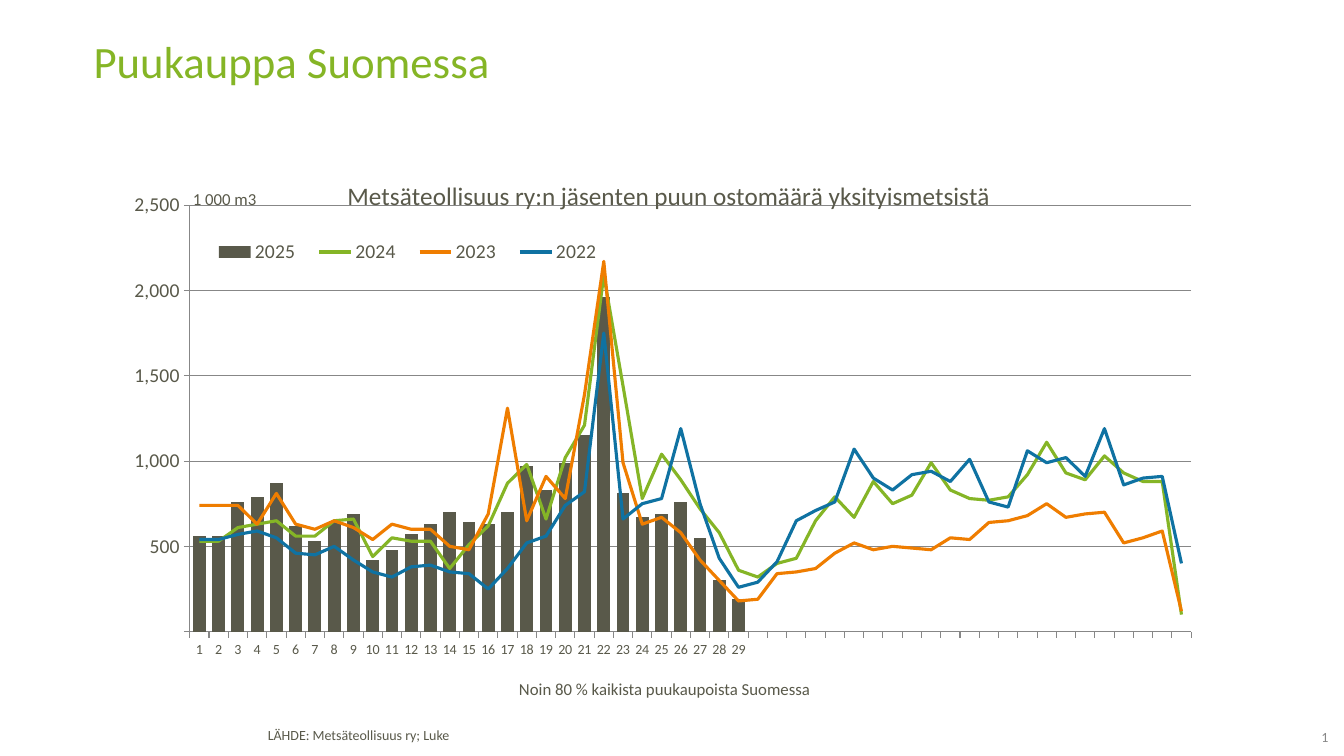
import lxml.etree
import pptx
import pptx.chart.data
import pptx.dml.color
import pptx.enum.chart
import pptx.enum.text
import pptx.oxml
import pptx.oxml.ns
import pptx.util
from pptx.util import Cm

RGBColor = pptx.dml.color.RGBColor
OLIVE = RGBColor(0x59, 0x59, 0x4A)
GREEN = RGBColor(0x85, 0xB5, 0x26)
ORANGE = RGBColor(0xEF, 0x7D, 0x00)
BLUE = RGBColor(0x0F, 0x72, 0xA2)
GREY = RGBColor(0x87, 0x87, 0x87)
FONT = "Calibri"
WEEKS = 52

# Weekly purchases, 1 000 m3
PURCHASES = {
    "2025": [560, 560, 760, 790, 870, 620, 530, 640, 690, 420, 480, 570, 630,
             700, 640, 630, 700, 970, 830, 990, 1150, 1960, 810, 670, 690, 760,
             550, 300, 190],
    "2024": [530, 530, 610, 630, 650, 560, 560, 650, 660, 440, 550, 530, 530,
             370, 510, 620, 870, 980, 660, 1020, 1210, 2090, 1440, 780, 1040, 890,
             720, 580, 360, 320, 400, 430, 650, 790, 670, 880, 750, 800, 990,
             830, 780, 770, 790, 920, 1110, 930, 890, 1030, 930, 880, 880, 100],
    "2023": [740, 740, 740, 630, 810, 630, 600, 650, 610, 540, 630, 600, 600,
             500, 480, 690, 1310, 650, 910, 780, 1390, 2170, 990, 630, 670, 580,
             420, 300, 180, 190, 340, 350, 370, 460, 520, 480, 500, 490, 480,
             550, 540, 640, 650, 680, 750, 670, 690, 700, 520, 550, 590, 120],
    "2022": [540, 540, 570, 590, 550, 460, 450, 500, 420, 350, 320, 380, 390,
             350, 340, 250, 370, 520, 560, 740, 820, 1750, 660, 750, 780, 1190,
             750, 430, 260, 290, 410, 650, 710, 760, 1070, 900, 830, 920, 940,
             880, 1010, 760, 730, 1060, 990, 1020, 910, 1190, 860, 900, 910, 400],
}
LINE_COLOURS = (GREEN, ORANGE, BLUE)


def style_font(font, size, colour=OLIVE):
    font.name = FONT
    font.size = pptx.util.Pt(size)
    font.bold = False
    font.color.rgb = colour


def add_text(page, text, left, top, width, height, size, colour=OLIVE, spacing=1.0):
    box = page.shapes.add_textbox(Cm(left), Cm(top), Cm(width), Cm(height))
    box.text_frame.word_wrap = True
    para = box.text_frame.paragraphs[0]
    para.text = text
    para.line_spacing = spacing
    style_font(para.font, size, colour)
    return box


def add_page_number(page):
    box = add_text(page, "1", 32.13, 18.39, 1.35, 0.48, 10, GREY)
    frame = box.text_frame
    frame.margin_left = frame.margin_right = frame.margin_top = 0
    frame.margin_bottom = Cm(0.1)
    frame.vertical_anchor = pptx.enum.text.MSO_ANCHOR.MIDDLE
    frame.paragraphs[0].alignment = pptx.enum.text.PP_ALIGN.RIGHT


def place(element, inner=False, **fractions):
    """Give a chart part a manual place, in fractions of the chart."""
    qn = pptx.oxml.ns.qn
    layout = element.find(qn("c:layout"))
    if layout is None:
        layout = lxml.etree.Element(qn("c:layout"))
        overlay = element.find(qn("c:overlay"))
        if overlay is None:
            element.insert(0, layout)
        else:
            overlay.addprevious(layout)
    manual = lxml.etree.SubElement(layout, qn("c:manualLayout"))
    settings = [("layoutTarget", "inner")] if inner else []
    settings += [("xMode", "edge"), ("yMode", "edge")]
    settings += [(key, str(value)) for key, value in fractions.items()]
    for tag, value in settings:
        lxml.etree.SubElement(manual, qn("c:" + tag)).set("val", value)


def move_years_to_lines(chart):
    """Turn every series but the first into lines on the same axes."""
    bars = chart._chartSpace.xpath("//c:barChart")[0]
    lines = pptx.oxml.parse_xml(
        f'<c:lineChart {pptx.oxml.ns.nsdecls("c")}><c:grouping val="standard"/>'
        '<c:varyColors val="0"/><c:marker val="1"/></c:lineChart>')
    marker = lines[-1]
    for series in bars.xpath("c:ser")[1:]:
        for flag in series.xpath("c:invertIfNegative"):
            series.remove(flag)
        marker.addprevious(series)
    for axis_id in bars.xpath("c:axId"):
        lines.append(pptx.oxml.parse_xml(lxml.etree.tostring(axis_id)))
    bars.addnext(lines)
    # Only the weeks that have a column carry a label
    for point in bars.xpath("c:ser/c:cat//c:pt"):
        if int(point.get("idx")) >= len(PURCHASES["2025"]):
            point.getparent().remove(point)


def style_axes(chart):
    for axis, size in ((chart.category_axis, 10), (chart.value_axis, 14)):
        style_font(axis.tick_labels.font, size)
        axis.format.line.color.rgb = GREY
        axis.major_tick_mark = pptx.enum.chart.XL_TICK_MARK.OUTSIDE
    values = chart.value_axis
    values.minimum_scale, values.maximum_scale = 0, 2500000
    values.major_unit = 500000
    values.tick_labels.number_format = "#,###,"
    values.tick_labels.number_format_is_linked = False
    values.has_major_gridlines = True
    values.major_gridlines.format.line.color.rgb = GREY

    # Unit above the value axis, written horizontally
    frame = values.axis_title.text_frame
    frame.text = "1 000 m3"
    style_font(frame.paragraphs[0].font, 12)
    title = chart._chartSpace.xpath("//c:valAx/c:title")[0]
    body = title.xpath(".//a:bodyPr")[0]
    body.set("rot", "0")
    body.set("vert", "horz")
    place(title, x=0.09, y=0.05)

    # Every week is labelled
    no_multi = chart._chartSpace.xpath("//c:catAx/c:noMultiLvlLbl")[0]
    no_multi.addprevious(pptx.oxml.parse_xml(
        f'<c:tickLblSkip {pptx.oxml.ns.nsdecls("c")} val="1"/>'))


def add_purchase_chart(page):
    data = pptx.chart.data.CategoryChartData()
    data.categories = [str(week) for week in range(1, WEEKS + 1)]
    for year, amounts in PURCHASES.items():
        missing = [None] * (WEEKS - len(amounts))
        data.add_series(year, [amount * 1000 for amount in amounts] + missing)
    chart = page.shapes.add_chart(
        pptx.enum.chart.XL_CHART_TYPE.COLUMN_CLUSTERED,
        Cm(2.11), Cm(3.99), Cm(29.69), Cm(13.11), data).chart
    style_font(chart.font, 10)
    move_years_to_lines(chart)
    place(chart._chartSpace.xpath("//c:plotArea")[0], inner=True,
          x=0.09, y=0.09, w=0.85, h=0.82)

    # Columns and lines
    columns, lines = chart.plots
    columns.gap_width = 50
    columns.vary_by_categories = False
    fill = columns.series[0].format.fill
    fill.solid()
    fill.fore_color.rgb = OLIVE
    for series, colour in zip(lines.series, LINE_COLOURS):
        series.smooth = False
        series.marker.style = pptx.enum.chart.XL_MARKER_STYLE.NONE
        series.format.line.color.rgb = colour
        series.format.line.width = pptx.util.Pt(2.25)

    style_axes(chart)

    # Heading and legend
    frame = chart.chart_title.text_frame
    frame.text = "Metsäteollisuus ry:n jäsenten puun ostomäärä yksityismetsistä"
    style_font(frame.paragraphs[0].font, 18)
    chart.chart_title.include_in_layout = True
    heading = chart._chartSpace.xpath("c:chart/c:title")[0]
    for overlay in heading.xpath("c:overlay"):
        overlay.set("val", "1")
    place(heading, x=0.22, y=0.03)
    chart.has_legend = True
    chart.legend.position = pptx.enum.chart.XL_LEGEND_POSITION.RIGHT
    chart.legend.include_in_layout = False
    style_font(chart.legend.font, 14)
    place(chart._chartSpace.xpath("//c:legend")[0], x=0.1, y=0.14, w=0.35, h=0.08)


def main():
    deck = pptx.Presentation()
    deck.slide_width, deck.slide_height = Cm(33.87), Cm(19.05)
    page = deck.slides.add_slide(deck.slide_layouts[6])

    add_text(page, "LÄHDE: Metsäteollisuus ry; Luke", 6.5, 18.24, 18.24, 0.69, 10,
             spacing=0.85)
    add_page_number(page)
    add_text(page, "Puukauppa Suomessa", 2.11, 0.99, 29.69, 2.49, 32, GREEN, 0.8)
    add_purchase_chart(page)
    add_text(page, "Noin 80 % kaikista puukaupoista Suomessa",
             12.83, 16.99, 8.33, 0.79, 12)
    deck.save("out.pptx")


if __name__ == "__main__":
    main()
